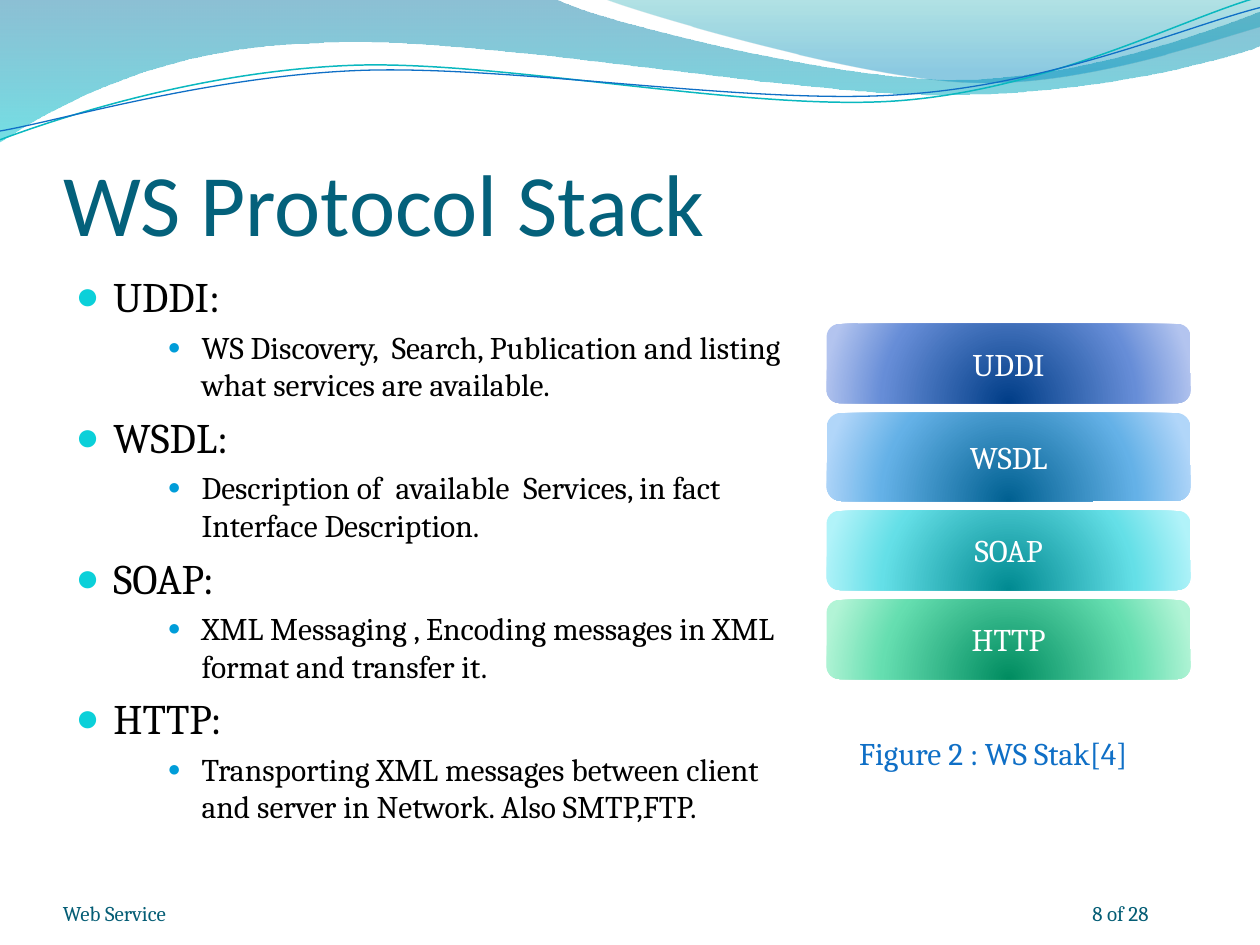
import math

from pptx import Presentation, oxml, util as u
from pptx.dml import color
from pptx.enum import shapes, text
from pptx.oxml import ns

INK = "045D75"
TOPICS = [
    ("UDDI:", "WS Discovery,  Search, Publication and listing what services are available."),
    ("WSDL:", "Description of  available  Services, in fact Interface Description."),
    ("SOAP:", "XML Messaging , Encoding messages in XML format and transfer it."),
    ("HTTP:", "Transporting XML messages between client and server in Network. Also SMTP,FTP."),
]
LAYERS = [
    ("UDDI", 0.63, ("003D87", "668DD7", "B3C4EF")),
    ("WSDL", 0.7, ("006091", "64B1E7", "B1D6F9")),
    ("SOAP", 0.63, ("008A91", "64DFE7", "B1F3F9")),
    ("HTTP", 0.63, ("008C60", "65DEB0", "B2F4D6")),
]
BANDS = [
    ((-0.01, -0.01, 10.02, 1.14),
     [(0, 0), (4.4, -0.01), (4.76, 0.17, 6.64, 0.63, 7.58, 0.63),
      (8.53, 0.63, 9.58, 0.26, 10, 0.09), (10.01, 0.36),
      (9.83, 0.44, 8.7, 0.76, 7.46, 0.75), (6.22, 0.75, 3.82, 0.28, 2.57, 0.34),
      (1.29, 0.36, 0.46, 0.83, -0.01, 1.13)],
     [(0, "0074A1", 45), (100, "00C6CF", 55)]),
    ((4.79, -0.01, 5.21, 0.7),
     [(4.79, -0.01), (5.09, 0.11, 6.82, 0.62, 7.69, 0.65),
      (8.56, 0.69, 9.61, 0.32, 10, 0.21), (10, 0)],
     [(0, "00A1A9", 30), (80, "008BBF", 45)]),
]
WAVES = [
    ((-0.02, 0.22, 10.02, 0.71),
     [(0, 1.11), (0.48, 0.93, 1.58, 0.57, 2.77, 0.52),
      (3.95, 0.47, 5.93, 0.89, 7.13, 0.8), (8.33, 0.71, 9.38, 0.15, 9.98, -0.02)],
     "0AB8BF", 0.85),
    ((-0.02, 0.3, 10.03, 0.58),
     [(0, 1.04), (0.47, 0.96, 1.64, 0.61, 2.83, 0.56),
      (4.03, 0.51, 5.97, 0.84, 7.17, 0.75), (8.36, 0.67, 9.41, 0.21, 10, 0.06)],
     "0F6FC6", 0.75),
]


def rgb(code):
    """Turn a hex string into a colour."""
    return color.RGBColor.from_string(code)


def write(para, words, size=18, font="Cambria", ink="000000", align=text.PP_ALIGN.LEFT):
    """Put formatted words in a paragraph."""
    para.alignment = align
    run = para.add_run()
    run.text = words
    run.font.size = u.Pt(size)
    run.font.name = font
    run.font.color.rgb = rgb(ink)


def frame(shape, anchor, inset=None):
    """Set wrapping, anchor and insets, and return the text frame."""
    body = shape.text_frame
    body.word_wrap = True
    body.auto_size = text.MSO_AUTO_SIZE.NONE
    body.vertical_anchor = anchor
    if inset:
        sides = ("margin_left", "margin_top", "margin_right", "margin_bottom")
        for side, gap in zip(sides, inset):
            setattr(body, side, u.Inches(gap))
    return body


def place(shape, box):
    """Move a shape to a box and bring it to the front."""
    shape.left, shape.top, shape.width, shape.height = map(u.Inches, box)
    tree = shape.element.getparent()
    tree.append(shape.element)


def shade(shape, stops, mode):
    """Fill a shape with a gradient of (place, colour, opacity) stops."""
    shape.fill.background()
    marks = "".join(
        f'<a:gs pos="{pos * 1000}"><a:srgbClr val="{code}">'
        f'<a:alpha val="{alpha * 1000}"/></a:srgbClr></a:gs>'
        for pos, code, alpha in stops)
    grad = oxml.parse_xml(
        f'<a:gradFill {ns.nsdecls("a")} rotWithShape="1">'
        f'<a:gsLst>{marks}</a:gsLst>{mode}</a:gradFill>')
    props = shape.element.spPr
    props.replace(props.find(ns.qn("a:noFill")), grad)


def local(step, box, turn):
    """Give the points of a step in EMU within a box, with its turn undone."""
    left, top, width, height = box
    angle = math.radians(-turn)
    pts = []
    for x, y in zip(step[::2], step[1::2]):
        dx, dy = x - left - width / 2, y - top - height / 2
        pts.append((u.Inches(width / 2 + dx * math.cos(angle) - dy * math.sin(angle)),
                    u.Inches(height / 2 + dx * math.sin(angle) + dy * math.cos(angle))))
    return pts


def outline(slide, box, steps, close=False, turn=0):
    """Build a freeform of lines and Bezier curves in a box."""
    moves = [local(step, box, turn) for step in steps]
    pen = slide.shapes.build_freeform(*moves[0][0])
    pen.add_line_segments([move[-1] for move in moves[1:]], close=close)
    shape = pen.convert_to_shape()
    shape.shadow.inherit = False
    place(shape, box)
    shape.rotation = turn
    track = shape.element.find(".//" + ns.qn("a:path"))
    track.set("w", str(shape.width))
    track.set("h", str(shape.height))
    for old, move in zip(list(track), moves):
        tag = "moveTo" if move is moves[0] else "lnTo" if len(move) == 1 else "cubicBezTo"
        pts = "".join(f'<a:pt x="{x}" y="{y}"/>' for x, y in move)
        track.replace(old, oxml.parse_xml(f'<a:{tag} {ns.nsdecls("a")}>{pts}</a:{tag}>'))
    return shape


def header(slide):
    """Draw the shaded bands and thin waves along the top."""
    for box, steps, stops in BANDS:
        band = outline(slide, box, steps, close=True)
        band.line.fill.background()
        shade(band, stops, '<a:lin ang="5400000" scaled="0"/>')
    for box, steps, ink, width in WAVES:
        wave = outline(slide, box, steps, turn=357.3)
        wave.fill.background()
        wave.line.color.rgb = rgb(ink)
        wave.line.width = u.Pt(width)


def title(slide, box):
    """Fill the title placeholder."""
    shape = slide.shapes.title
    place(shape, box)
    body = frame(shape, text.MSO_ANCHOR.BOTTOM, (0, 0.05, 0, 0))
    write(body.paragraphs[0], "WS Protocol Stack", size=50, font="Calibri", ink="04617B")


def bullet(para, left, hang, ink, size):
    """Give a paragraph a hanging round bullet."""
    props = para._p.get_or_add_pPr()
    props.set("marL", str(u.Inches(left)))
    props.set("indent", str(-u.Inches(hang)))
    for part in (f'buClr {ns.nsdecls("a")}><a:srgbClr val="{ink}"/></a:buClr>',
                 f'buSzPct {ns.nsdecls("a")} val="{size * 1000}"/>',
                 f'buChar {ns.nsdecls("a")} char="●"/>'):
        props.append(oxml.parse_xml("<a:" + part))


def topics(slide, box):
    """Fill the body placeholder with the two-level list."""
    shape = slide.placeholders[1]
    place(shape, box)
    body = frame(shape, text.MSO_ANCHOR.TOP)
    for i, (name, note) in enumerate(TOPICS):
        head = body.add_paragraph() if i else body.paragraphs[0]
        write(head, name, size=24)
        bullet(head, 0.3, 0.3, "0BD0D9", 95)
        line = body.add_paragraph()
        line.level = 2
        write(line, note)
        bullet(line, 1, 0.27, "009DD9", 70)


def stack(slide, box):
    """Stack the protocol layers with equal gaps inside the box."""
    left, top, width, height = box
    gap = (height - sum(tall for _, tall, _ in LAYERS)) / (len(LAYERS) - 1)
    for name, tall, inks in LAYERS:
        layer = slide.shapes.add_shape(shapes.MSO_SHAPE.ROUNDED_RECTANGLE,
                                       *map(u.Inches, (left, top, width, tall)))
        layer.shadow.inherit = False
        layer.line.fill.background()
        shade(layer, [(pos, ink, 100) for pos, ink in zip((0, 68, 100), inks)],
              '<a:path path="circle"><a:fillToRect l="50000" t="130000" '
              'r="50000" b="-30000"/></a:path>')
        body = frame(layer, text.MSO_ANCHOR.MIDDLE)
        write(body.paragraphs[0], name, ink="FFFFFF", align=text.PP_ALIGN.CENTER)
        top += tall + gap


def label(slide, box, words, anchor=text.MSO_ANCHOR.BOTTOM, inset=(0, 0, 0, 0), **style):
    """Add a text box with one line."""
    shape = slide.shapes.add_textbox(*map(u.Inches, box))
    write(frame(shape, anchor, inset).paragraphs[0], words, **style)


def main():
    """Build the slide and save it."""
    deck = Presentation()
    deck.slide_width, deck.slide_height = u.Inches(10), u.Inches(7.5)
    slide = deck.slides.add_slide(deck.slide_layouts[1])
    header(slide)
    title(slide, (0.5, 0.77, 9, 1.25))
    topics(slide, (0.5, 2.1, 5.91, 5.01))
    label(slide, (0.5, 6.95, 2.33, 0.4), "Web Service", size=12, ink=INK)
    label(slide, (8.67, 6.95, 0.83, 0.4), "8 of 28", size=12, ink=INK)
    stack(slide, (6.56, 2.57, 2.89, 2.82))
    label(slide, (6.72, 5.78, 2.5, 0.4), "Figure 2 : WS Stak[4]", ink="0F6FC6",
          anchor=text.MSO_ANCHOR.TOP, inset=(0.1, 0.05, 0.1, 0.05))
    deck.save("out.pptx")


if __name__ == "__main__":
    main()
